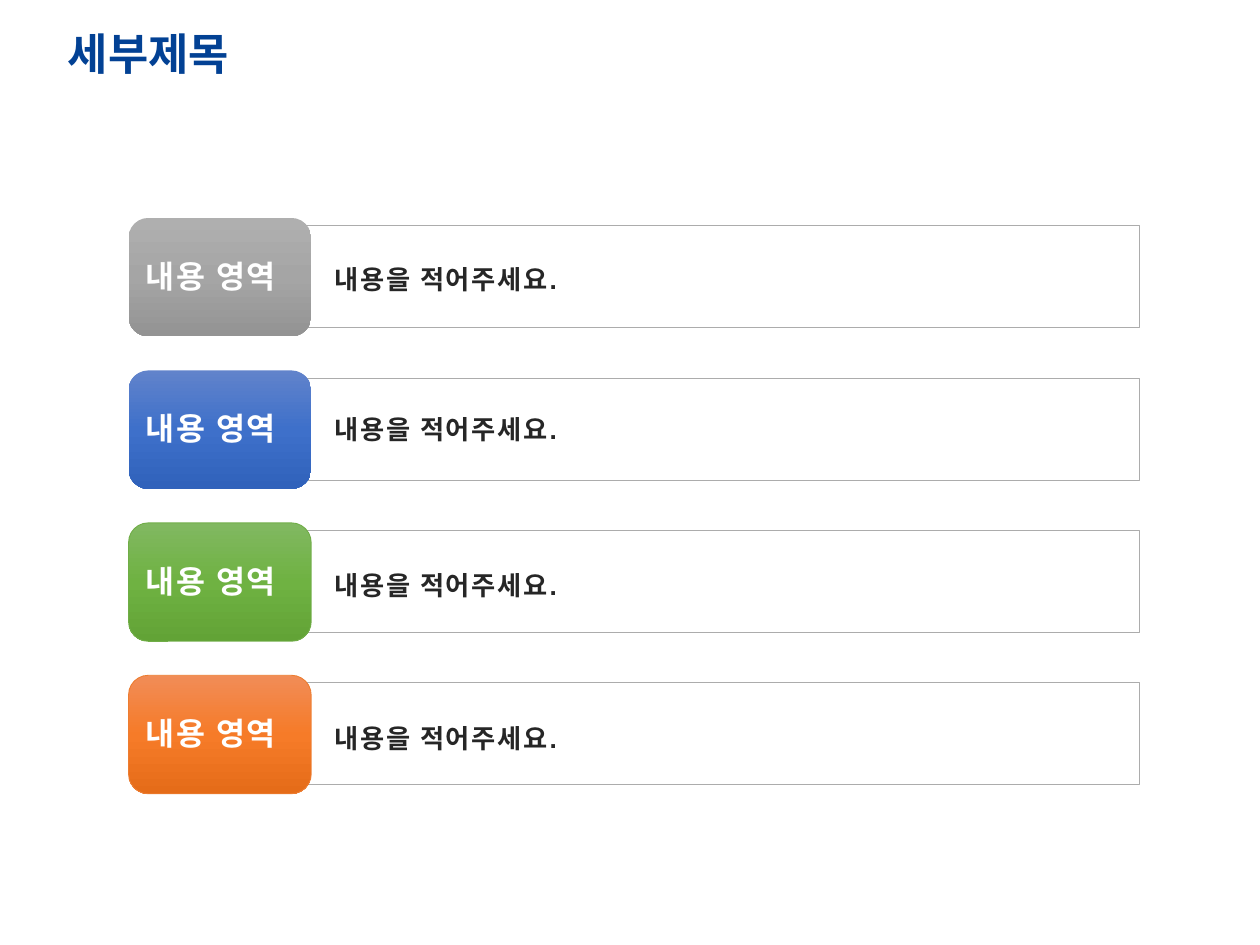
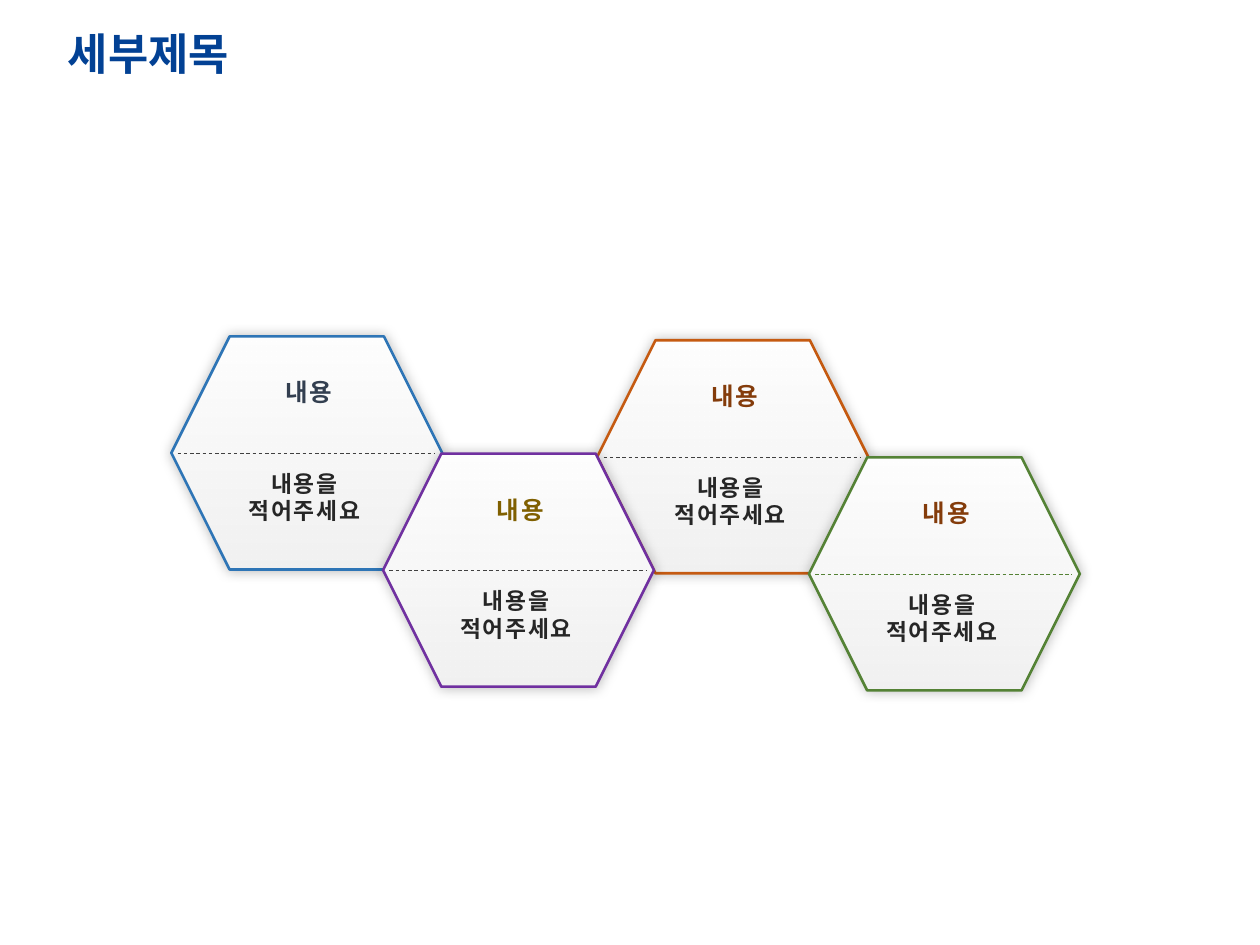
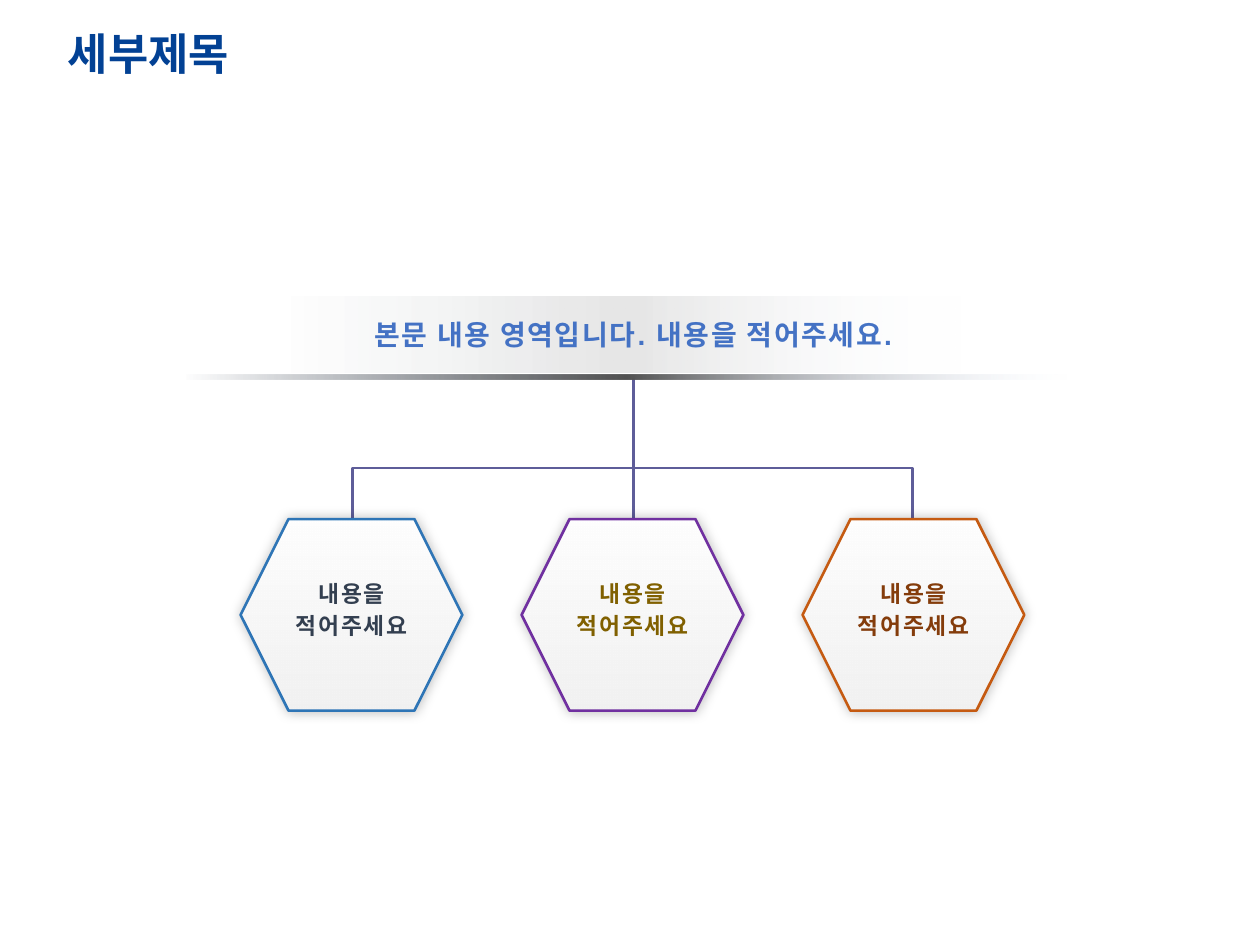
from dataclasses import dataclass
from typing import Any, NamedTuple

from lxml.etree import SubElement
from pptx import Presentation
from pptx.dml.color import RGBColor
from pptx.enum.dml import MSO_LINE
from pptx.enum.shapes import MSO_CONNECTOR, MSO_SHAPE
from pptx.enum.text import MSO_ANCHOR, PP_ALIGN
from pptx.oxml.ns import qn
from pptx.util import Inches, Pt

COLORS = {
    "title": "024194", "white": "FFFFFF", "text": "262626", "border": "ACACAC",
    "blue": "2E75B6", "purple": "7030A0", "orange": "C55A11", "green": "548235",
    "navy": "333F50", "olive": "806000", "brown": "843C0B", "dash": "404040",
    "branch": "5E5D99", "headline": "4472C4", "black": "000000",
    "charcoal": "525252", "pale": "E1EBFB", "mist": "F2F2F2",
    "gray_top": "AFAFAF", "gray_middle": "A5A5A5", "gray_bottom": "939393",
    "blue_top": "6183CB", "blue_middle": "3E70CA", "blue_bottom": "3062BB",
    "green_top": "81B861", "green_middle": "6FB242", "green_bottom": "62A336",
    "orange_top": "F18C57", "orange_middle": "F67B28", "orange_bottom": "E56C19",
    "green_edge": "70AD47", "orange_edge": "ED7D31",
}


class Box(NamedTuple):
    left: float
    top: float
    width: float
    height: float

    def lengths(self) -> list[int]:
        return [Inches(value) for value in self]


class Point(NamedTuple):
    x: float
    y: float


class Stop(NamedTuple):
    position: int
    color: str
    opacity: int = 100


@dataclass(frozen=True)
class TextStyle:
    size: float
    color: str
    font: str = "Arial"
    spacing: int = 100
    alignment: PP_ALIGN = PP_ALIGN.LEFT
    line_spacing: Any = None
    anchor: MSO_ANCHOR = MSO_ANCHOR.TOP


@dataclass(frozen=True)
class ContentRow:
    family: str
    text_drop: float
    edge: str | None = None


@dataclass(frozen=True)
class HexagonCard:
    left: float
    top: float
    edge: str
    heading: str
    divider: str = "dash"


@dataclass(frozen=True)
class Branch:
    edge: str
    text: str


TITLE_STYLE = TextStyle(25, "title", "Calibri", 0, line_spacing=0.9, anchor=MSO_ANCHOR.MIDDLE)
TAB_STYLE = TextStyle(18, "white")
ROW_STYLE = TextStyle(15, "text")
CARD_BODY_STYLE = TextStyle(13, "text", alignment=PP_ALIGN.CENTER)
HEADLINE_STYLE = TextStyle(16, "headline", alignment=PP_ALIGN.CENTER)
BODY_LINES = ["내용을", "적어주세요"]
HEXAGON_STOPS = [Stop(0, "white"), Stop(100, "mist"), Stop(100, "pale", 0)]
DOWNWARD = 270
RIGHTWARD = 0

ROWS = [
    ContentRow("gray", 0.25),
    ContentRow("blue", 0.23),
    ContentRow("green", 0.26, "green_edge"),
    ContentRow("orange", 0.26, "orange_edge"),
]
CARDS = [
    HexagonCard(4.74, 2.7, "orange", "brown"),
    HexagonCard(1.36, 2.67, "blue", "navy"),
    HexagonCard(3.04, 3.6, "purple", "olive"),
    HexagonCard(6.42, 3.63, "green", "brown", "green"),
]
BRANCHES = [Branch("blue", "navy"), Branch("purple", "olive"), Branch("orange", "brown")]


def rgb(name: str) -> RGBColor:
    return RGBColor.from_string(COLORS[name])


def apply_format(target: Any, values: dict[str, Any]) -> None:
    for name, value in values.items():
        setattr(target, name, value)


def add_text(slide: Any, box: Box, lines: list[str], style: TextStyle) -> None:
    frame = slide.shapes.add_textbox(*box.lengths()).text_frame
    apply_format(frame, {"word_wrap": True, "vertical_anchor": style.anchor})
    for index, line in enumerate(lines):
        paragraph = frame.add_paragraph() if index else frame.paragraphs[0]
        apply_format(paragraph, {"alignment": style.alignment, "line_spacing": style.line_spacing})
        run = paragraph.add_run()
        run.text = line
        apply_format(run.font, {"size": Pt(style.size), "name": style.font, "bold": True})
        run.font.color.rgb = rgb(style.color)
        if style.spacing:
            run.font._element.set("spc", str(style.spacing))


def set_line(line: Any, color: str | None, width: float) -> None:
    if color is None:
        line.fill.background()
        return
    line.color.rgb = rgb(color)
    line.width = Pt(width)


def add_color(parent: Any, color: str, opacity: int) -> None:
    element = SubElement(parent, qn("a:srgbClr"), val=COLORS[color])
    if opacity < 100:
        SubElement(element, qn("a:alpha"), val=str(opacity * 1000))


def set_gradient(shape: Any, stops: list[Stop], angle: int) -> None:
    shape.fill.gradient()
    shape.fill.gradient_angle = angle
    stop_list = shape._element.spPr.find(".//" + qn("a:gsLst"))
    for child in list(stop_list):
        stop_list.remove(child)
    for stop in stops:
        element = SubElement(stop_list, qn("a:gs"), pos=str(stop.position * 1000))
        add_color(element, stop.color, stop.opacity)


def add_panel(
    shapes: Any, kind: MSO_SHAPE, box: Box, edge: str | None = None, width: float = 0.5
) -> Any:
    shape = shapes.add_shape(kind, *box.lengths())
    set_line(shape.line, edge, width)
    shape.shadow.inherit = False
    return shape


def add_hexagon(shapes: Any, box: Box, edge: str) -> None:
    shape = add_panel(shapes, MSO_SHAPE.HEXAGON, box, edge, 1.5)
    set_gradient(shape, HEXAGON_STOPS, DOWNWARD)
    effects = shape._element.spPr.find(qn("a:effectLst"))
    shadow = SubElement(
        effects, qn("a:outerShdw"), blurRad=str(Pt(7)), dist="0", dir="0", algn="ctr", rotWithShape="0"
    )
    add_color(shadow, "black", 25)


def add_line(
    shapes: Any, begin: Point, end: Point, color: str, width: float,
    kind: MSO_CONNECTOR = MSO_CONNECTOR.STRAIGHT,
) -> Any:
    connector = shapes.add_connector(kind, *[Inches(value) for value in (*begin, *end)])
    set_line(connector.line, color, width)
    SubElement(connector._element.spPr, qn("a:effectLst"))
    return connector


def add_upward_elbow(shapes: Any, begin: Point, end: Point, bend: float) -> None:
    center = Point((begin.x + end.x) / 2, (begin.y + end.y) / 2)
    from_right = begin.x > end.x
    reach = (begin.y - end.y) / 2 * (-1 if from_right else 1)
    spread = abs(begin.x - end.x) / 2
    connector = add_line(
        shapes,
        Point(center.x + reach, center.y + spread),
        Point(center.x - reach, center.y - spread),
        "branch", 1.5, MSO_CONNECTOR.ELBOW,
    )
    properties = connector._element.spPr
    properties.find(qn("a:xfrm")).set("rot", str((270 if from_right else 90) * 60000))
    adjustments = properties.find(qn("a:prstGeom")).find(qn("a:avLst"))
    SubElement(adjustments, qn("a:gd"), name="adj1", fmla=f"val {round(bend * 100000)}")


def add_titled_slide(presentation: Any) -> Any:
    slide = presentation.slides.add_slide(presentation.slide_layouts[6])
    add_text(slide, Box(0.44, 0.02, 8.62, 0.86), ["세부제목"], TITLE_STYLE)
    return slide


def build_rows_slide(presentation: Any) -> None:
    slide = add_titled_slide(presentation)
    for index, row in enumerate(ROWS):
        top = 1.79 + 1.21 * index
        shapes = slide.shapes.add_group_shape().shapes
        panel = add_panel(shapes, MSO_SHAPE.RECTANGLE, Box(1.92, top, 7.12, 0.81), "border")
        panel.fill.solid()
        panel.fill.fore_color.rgb = rgb("white")
        tab = add_panel(
            shapes, MSO_SHAPE.ROUNDED_RECTANGLE, Box(1.02, top - 0.06, 1.45, 0.94), row.edge
        )
        stops = [
            Stop(position, f"{row.family}_{part}")
            for position, part in ((0, "top"), (50, "middle"), (100, "bottom"))
        ]
        set_gradient(tab, stops, DOWNWARD)
        add_text(slide, Box(1.06, top + 0.2, 1.37, 0.4), ["내용 영역"], TAB_STYLE)
        add_text(
            slide, Box(2.56, top + row.text_drop, 6.47, 0.35), ["내용을 적어주세요."], ROW_STYLE
        )


def build_hexagons_slide(presentation: Any) -> None:
    slide = add_titled_slide(presentation)
    for card in CARDS:
        left, top = card.left, card.top
        shapes = slide.shapes.add_group_shape().shapes
        add_hexagon(shapes, Box(left, top, 2.15, 1.85), card.edge)
        middle = top + 0.93
        divider = add_line(
            shapes, Point(left + 0.05, middle), Point(left + 2.09, middle), card.divider, 0.5
        )
        divider.line.dash_style = MSO_LINE.DASH
        heading_style = TextStyle(
            14, card.heading, alignment=PP_ALIGN.CENTER, line_spacing=Pt(18)
        )
        add_text(slide, Box(left + 0.23, top + 0.26, 1.72, 0.35), ["내용"], heading_style)
        add_text(slide, Box(left + 0.28, top + 1.01, 1.55, 0.54), BODY_LINES, CARD_BODY_STYLE)


def build_tree_slide(presentation: Any) -> None:
    slide = add_titled_slide(presentation)
    shapes = slide.shapes
    root = Point(5.03, 3)
    add_upward_elbow(shapes, Point(7.24, 5.38), root, 0.7)
    add_upward_elbow(shapes, Point(2.8, 5.38), root, 0.7)
    add_line(shapes, Point(root.x, 3.21), Point(root.x, 4.6), "branch", 1.5)
    banner = add_panel(shapes, MSO_SHAPE.RECTANGLE, Box(2.26, 2.35, 5.42, 0.61))
    set_gradient(
        banner, [Stop(0, "navy", 0), Stop(50, "black", 10), Stop(100, "pale", 0)], RIGHTWARD
    )
    for index, branch in enumerate(BRANCHES):
        left = 1.91 + 2.23 * index
        add_hexagon(shapes, Box(left, 4.12, 1.76, 1.52), branch.edge)
        style = TextStyle(13, branch.text, alignment=PP_ALIGN.CENTER, line_spacing=Pt(18))
        add_text(slide, Box(left + 0.02, 4.52, 1.72, 0.61), BODY_LINES, style)
    rule = add_panel(shapes, MSO_SHAPE.RECTANGLE, Box(1.47, 2.97, 7, 0.04))
    set_gradient(
        rule, [Stop(0, "navy", 0), Stop(50, "charcoal"), Stop(100, "pale", 0)], RIGHTWARD
    )
    add_text(
        slide, Box(1.79, 2.47, 6.47, 0.37),
        ["본문 내용 영역입니다. 내용을 적어주세요."], HEADLINE_STYLE,
    )


def main() -> None:
    presentation = Presentation()
    apply_format(presentation, {"slide_width": Inches(10), "slide_height": Inches(7.5)})
    build_rows_slide(presentation)
    build_hexagons_slide(presentation)
    build_tree_slide(presentation)
    presentation.save("out.pptx")


if __name__ == "__main__":
    main()
